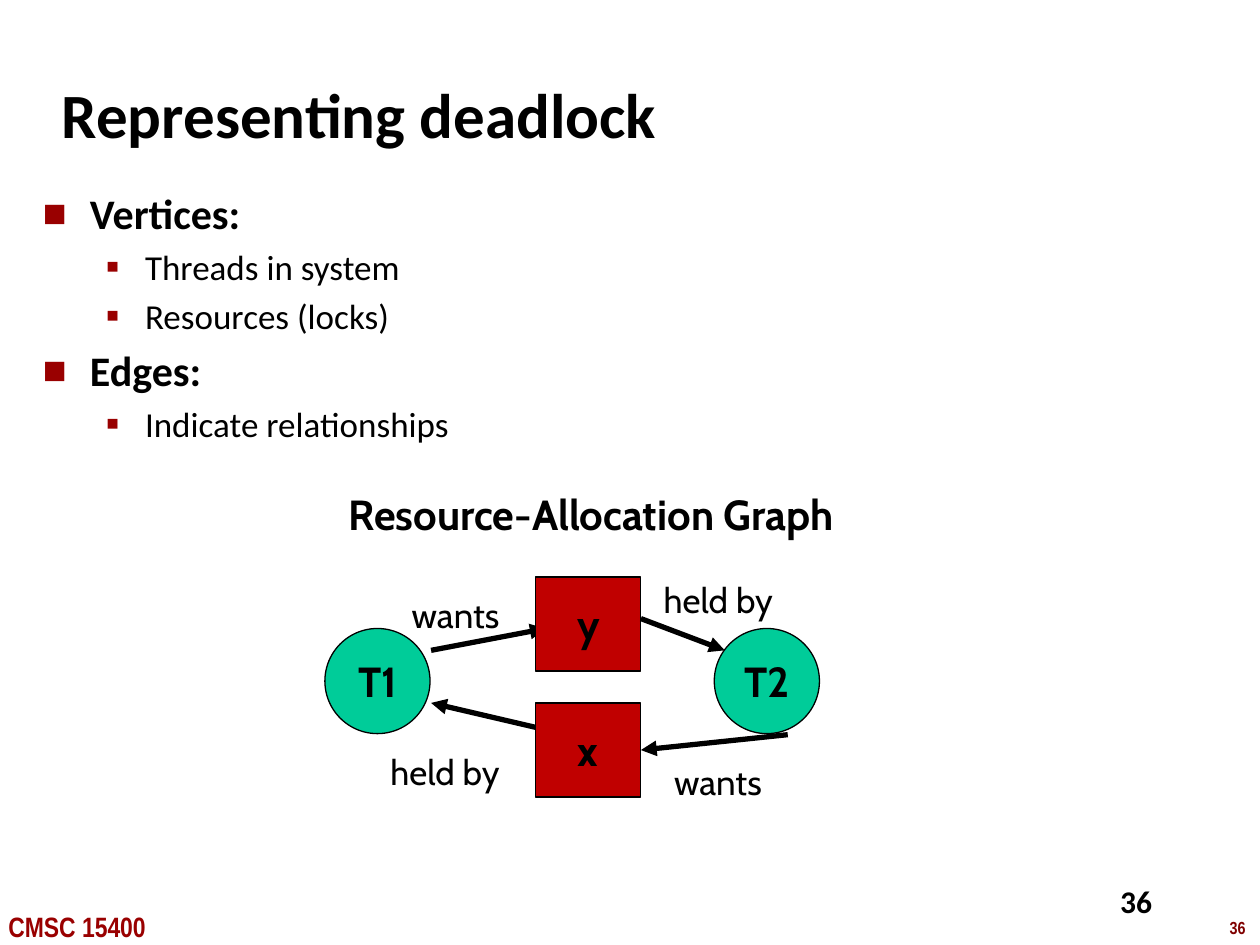
import dataclasses
import typing

import lxml.etree
import pptx
import pptx.dml.color
import pptx.enum.shapes
import pptx.enum.text
import pptx.oxml.ns
import pptx.util

Cm = pptx.util.Cm
Pt = pptx.util.Pt
Shape = pptx.enum.shapes.MSO_SHAPE
Align = pptx.enum.text.PP_ALIGN
Anchor = pptx.enum.text.MSO_ANCHOR

COLORS = {
    "ink": "000000",
    "thread": "00CC99",
    "lock": "C00000",
    "mark": "990000",
    "page": "800000",
}


@dataclasses.dataclass
class Label:
    text: str
    left: float
    top: float
    width: float
    height: float = 1.14
    size: int = 20
    face: str = "Cabin"
    color: str = "ink"
    bold: bool = False
    wrap: bool = True


@dataclasses.dataclass
class Node:
    text: str
    kind: typing.Any
    left: float
    top: float
    height: float
    color: str


@dataclasses.dataclass
class Edge:
    start: tuple[float, float]
    end: tuple[float, float]


@dataclasses.dataclass
class Level:
    size: int
    bold: bool
    margin: float
    indent: float
    mark: str
    scale: int
    gap: float


THREADS = [
    Node("T1", Shape.OVAL, 6.55, 12.67, 2.12, "thread"),
    Node("T2", Shape.OVAL, 14.4, 12.67, 2.12, "thread"),
]
LOCKS = [
    Node("y", Shape.RECTANGLE, 10.8, 11.63, 1.9, "lock"),
    Node("x", Shape.RECTANGLE, 10.8, 14.17, 1.9, "lock"),
]
LEFT_EDGES = [
    Edge((8.69, 13.11), (11, 12.67)),
    Edge((11.43, 14.81), (8.69, 14.17)),
]
HELD = Edge((12.92, 12.47), (14.61, 13.11))
WANTS = Edge((15.88, 14.81), (12.92, 15.12))
LABELS = [
    Label("Resource-Allocation Graph", 6.78, 9.73, 12.27, 1.32, 24, bold=True),
    Label("wants", 8.05, 11.84, 4.88),
    Label("held by", 7.62, 15.01, 3.61),
    Label("wants", 13.34, 15.21, 2.54),
    Label("held by", 13.13, 11.53, 3.61),
    Label("36", 22.33, 17.65, 2.74, 1.02, 18, "Calibri", bold=True),
    Label("36", 24.54, 18.36, 0.86, 0.69, 10, "Arial Narrow", "page", True, False),
    Label("CMSC 15400", -0.08, 18.21, 3.61, 0.94, 16, "Arial Narrow", "mark", True, False),
]
LEVELS = [
    Level(24, True, 0.95, -0.95, "■", 60, 4.8),
    Level(20, False, 2.06, -0.79, "▪", 110, 4),
]
POINTS = [
    ("Vertices:", 0),
    ("Threads in system", 1),
    ("Resources (locks)", 1),
    ("Edges:", 0),
    ("Indicate relationships", 1),
]


def rgb(name: str):
    return pptx.dml.color.RGBColor.from_string(COLORS[name])


def add(parent, tag: str, **attrs: str):
    return lxml.etree.SubElement(parent, pptx.oxml.ns.qn(tag), attrs)


def style(para, size: int, face: str, bold: bool, color: str = "ink") -> None:
    for run in para.runs:
        run.font.size = Pt(size)
        run.font.name = face
        run.font.bold = bold
        run.font.color.rgb = rgb(color)


def place(shape, left: float, top: float, width: float, height: float) -> None:
    shape.left, shape.top = Cm(left), Cm(top)
    shape.width, shape.height = Cm(width), Cm(height)


def draw_title(slide) -> None:
    title = slide.shapes.title
    place(title, 0.99, 1.22, 21.08, 2.11)
    frame = title.text_frame
    frame.text = "Representing deadlock"
    frame.vertical_anchor = Anchor.MIDDLE
    frame.paragraphs[0].alignment = Align.LEFT
    style(frame.paragraphs[0], 36, "Calibri", True)


def draw_list(slide) -> None:
    body = slide.placeholders[1]
    place(body, 0.61, 3.66, 24.16, 6.07)
    frame = body.text_frame
    frame.auto_size = pptx.enum.text.MSO_AUTO_SIZE.NONE
    frame.text = "\n".join(text for text, depth in POINTS)
    for spot, (para, (text, depth)) in enumerate(zip(frame.paragraphs, POINTS)):
        level = LEVELS[depth]
        para.level = depth
        props = para._p.get_or_add_pPr()
        props.set("marL", str(Cm(level.margin)))
        props.set("indent", str(Cm(level.indent)))
        add(add(props, "a:buClr"), "a:srgbClr", val=COLORS["mark"])
        add(props, "a:buSzPct", val=str(level.scale * 1000))
        add(props, "a:buFont", typeface="Calibri")
        add(props, "a:buChar", char=level.mark)
        para.space_before = Pt(level.gap if spot else 0)
        style(para, level.size, "Calibri", level.bold)


def draw_node(slide, node: Node):
    shape = slide.shapes.add_shape(
        node.kind, Cm(node.left), Cm(node.top), Cm(2.12), Cm(node.height))
    shape.shadow.inherit = False
    shape.fill.solid()
    shape.fill.fore_color.rgb = rgb(node.color)
    shape.line.color.rgb = rgb("ink")
    shape.line.width = Pt(0.75)
    frame = shape.text_frame
    frame.text = node.text
    frame.word_wrap = False
    frame.vertical_anchor = Anchor.MIDDLE
    frame.paragraphs[0].alignment = Align.CENTER
    style(frame.paragraphs[0], 24, "Cabin", True)
    return shape


def draw_edge(slide, edge: Edge):
    line = slide.shapes.add_connector(
        pptx.enum.shapes.MSO_CONNECTOR.STRAIGHT,
        *map(Cm, edge.start), *map(Cm, edge.end))
    line.line.color.rgb = rgb("ink")
    line.line.width = Pt(3)
    add(line.line._get_or_add_ln(), "a:tailEnd", type="triangle")
    add(line._element.spPr, "a:effectLst")
    return line


def draw_label(slide, label: Label) -> None:
    box = slide.shapes.add_textbox(
        Cm(label.left), Cm(label.top), Cm(label.width), Cm(label.height))
    frame = box.text_frame
    frame.word_wrap = label.wrap
    frame.text = label.text
    style(frame.paragraphs[0], label.size, label.face, label.bold, label.color)


def main() -> None:
    deck = pptx.Presentation()
    deck.slide_width, deck.slide_height = Cm(25.4), Cm(19.05)
    slide = deck.slides.add_slide(deck.slide_layouts[1])
    draw_title(slide)
    draw_list(slide)
    for node in THREADS:
        draw_node(slide, node)
    for edge in LEFT_EDGES:
        draw_edge(slide, edge)
    locks = [draw_node(slide, node) for node in LOCKS]
    draw_edge(slide, HELD)
    draw_edge(slide, WANTS).end_connect(locks[1], 3)
    for label in LABELS:
        draw_label(slide, label)
    deck.save("out.pptx")


if __name__ == "__main__":
    main()
